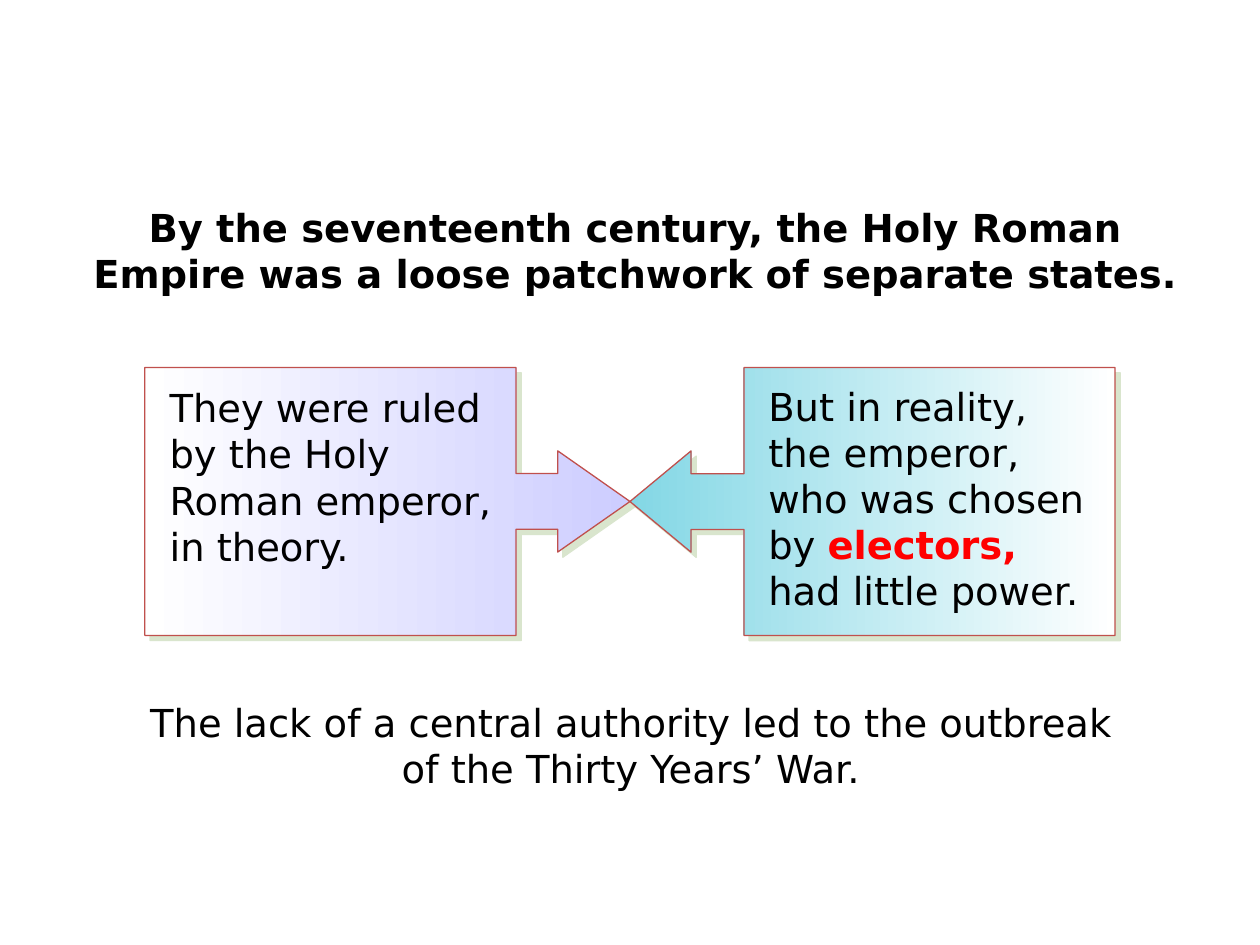
"""Build a slide on the Holy Roman Empire with two callouts meeting tip to tip."""
from lxml.etree import SubElement
from pptx import Presentation
from pptx.dml.color import RGBColor as Rgb
from pptx.enum.shapes import MSO_SHAPE as Shape
from pptx.enum.text import MSO_AUTO_SIZE as AutoSize, PP_ALIGN as Align
from pptx.oxml.ns import qn
from pptx.util import Cm, Pt

COLORS = {"text": "000000", "term": "FF0000", "outline": "C0504D", "shadow": "ADC793",
          "theory": "CDCDFF", "reality": "83D7E5", "fade": "FFFFFF"}
FONT, SIZE = "DejaVu Sans", Pt(22)

STATEMENTS = [
    ("By the seventeenth century, the Holy Roman Empire was a loose patchwork of "
     "separate states.", (1.27, 3.99, 23.06, 2.13), True),
    ("The lack of a central authority led to the outbreak of the Thirty Years’ War.",
     (2.34, 13.97, 20.75, 2.13), False),
]
CALLOUTS = [
    {"tint": "theory", "turn": 90, "head": 0.27, "grouped": False,
     "box": (3.17, 7.62, 7.01, 4.04),
     "runs": [("They were ruled by the Holy Roman emperor, in theory.", False)]},
    {"tint": "reality", "turn": 270, "head": 0.228, "grouped": True,
     "box": (15.24, 7.59, 7.01, 4.98),
     "runs": [("But in reality, the emperor, who was chosen by ", False),
              ("electors,", True), (" had little power.", False)]},
]
MEETING_X, MIDDLE_Y = 12.7, 10.11
SPAN, LENGTH = 5.4, 9.78


def rgb(name):
    return Rgb.from_string(COLORS[name])


def add_text(parent, box, runs, align=Align.LEFT, bold=False):
    textbox = parent.add_textbox(*map(Cm, box))
    frame = textbox.text_frame
    frame.word_wrap = True
    frame.auto_size = AutoSize.SHAPE_TO_FIT_TEXT
    paragraph = frame.paragraphs[0]
    paragraph.alignment = align
    font = paragraph.font
    font.name, font.size, font.bold = FONT, SIZE, bold
    font.color.rgb = rgb("text")
    for words, is_term in runs:
        run = paragraph.add_run()
        run.text = words
        if is_term:
            run.font.bold = True
            run.font.color.rgb = rgb("term")


def add_shadow(callout):
    callout.shadow.inherit = False
    effects = callout.fill._xPr.find(qn("a:effectLst"))
    shadow = SubElement(effects, qn("a:outerShdw"), blurRad="0", dist=str(Pt(4.2)),
                        dir="2700000", algn="ctr", rotWithShape="0")
    color = SubElement(shadow, qn("a:srgbClr"), val=COLORS["shadow"])
    SubElement(color, qn("a:alpha"), val="46000")


def add_callout(parent, tint, turn, head):
    side = -1 if turn == 90 else 1
    center_x = MEETING_X + side * LENGTH / 2
    callout = parent.add_shape(Shape.UP_ARROW_CALLOUT, Cm(center_x - SPAN / 2),
                               Cm(MIDDLE_Y - LENGTH / 2), Cm(SPAN), Cm(LENGTH))
    callout.rotation = turn
    for index, value in enumerate((0.208, 0.189, head, 0.765)):
        callout.adjustments[index] = value
    callout.fill.gradient()
    callout.fill.gradient_angle = 270
    for stop, name in zip(callout.fill.gradient_stops, (tint, "fade")):
        stop.color.rgb = rgb(name)
    callout.line.color.rgb = rgb("outline")
    callout.line.width = Pt(0.75)
    add_shadow(callout)


def main():
    deck = Presentation()
    deck.slide_width, deck.slide_height = Cm(25.4), Cm(19.05)
    shapes = deck.slides.add_slide(deck.slide_layouts[6]).shapes
    for words, box, bold in STATEMENTS:
        add_text(shapes, box, [(words, False)], Align.CENTER, bold)
    for part in CALLOUTS:
        parent = shapes.add_group_shape().shapes if part["grouped"] else shapes
        add_callout(parent, part["tint"], part["turn"], part["head"])
        add_text(parent, part["box"], part["runs"])
    deck.save("out.pptx")


if __name__ == "__main__":
    main()
